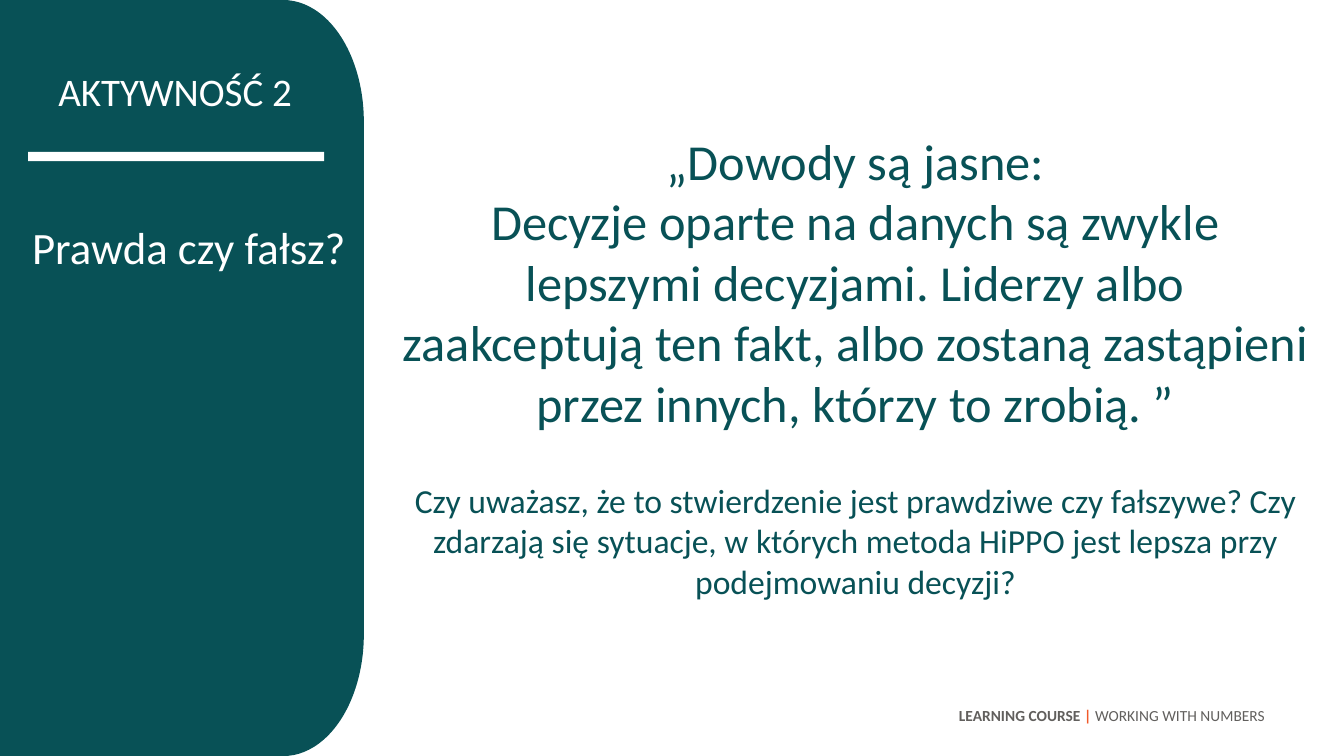
from pptx import Presentation
from pptx.dml.color import RGBColor
from pptx.enum.shapes import MSO_SHAPE
from pptx.enum.text import PP_ALIGN
from pptx.util import Cm, Pt

COLORS = {
    "teal": "085156",
    "white": "FFFFFF",
    "gray": "615F5D",
    "orange": "F15A2A",
}
FONT = "Calibri"
SLIDE_WIDTH = 33.87
SLIDE_HEIGHT = 19.05
PANEL_WIDTH = 7.14
ROUNDED_EDGE_WIDTH = 4.06


def add_block(slide, kind, left, top, width, height, color, rotation=0):
    shape = slide.shapes.add_shape(kind, Cm(left), Cm(top), Cm(width), Cm(height))
    shape.rotation = rotation
    shape.shadow.inherit = False
    shape.fill.solid()
    shape.fill.fore_color.rgb = RGBColor.from_string(COLORS[color])
    shape.line.fill.background()


def add_side_panel(slide):
    add_block(slide, MSO_SHAPE.RECTANGLE, 0, 0, PANEL_WIDTH, SLIDE_HEIGHT, "teal")
    add_block(
        slide,
        MSO_SHAPE.FLOWCHART_TERMINATOR,
        PANEL_WIDTH - SLIDE_HEIGHT / 2,
        (SLIDE_HEIGHT - ROUNDED_EDGE_WIDTH) / 2,
        SLIDE_HEIGHT,
        ROUNDED_EDGE_WIDTH,
        "teal",
        rotation=270,
    )
    add_block(slide, MSO_SHAPE.RECTANGLE, 0.71, 3.83, 7.46, 0.23, "white")


def add_text_frame(slide, left, top, width, height):
    text_box = slide.shapes.add_textbox(Cm(left), Cm(top), Cm(width), Cm(height))
    text_box.text_frame.word_wrap = True
    return text_box.text_frame


def write(paragraph, text, size, color, bold=False, align=PP_ALIGN.LEFT,
          line_spacing=1.0, space_before=0):
    paragraph.alignment = align
    paragraph.line_spacing = line_spacing
    paragraph.space_before = Pt(space_before)
    run = paragraph.add_run()
    run.text = text
    run.font.name = FONT
    run.font.size = Pt(size)
    run.font.bold = bold
    run.font.color.rgb = RGBColor.from_string(COLORS[color])


def add_headings(slide):
    activity = add_text_frame(slide, 1.22, 1.9, 6.48, 1.93)
    write(activity.paragraphs[0], "AKTYWNOŚĆ 2", 27.9, "white",
          line_spacing=0.7, space_before=10)
    question = add_text_frame(slide, 0.56, 5.56, 8.61, 10.11)
    write(question.paragraphs[0], "Prawda czy fałsz?", 32, "white",
          line_spacing=0.9, space_before=10)


def add_statement(slide):
    frame = add_text_frame(slide, 9.84, 3.15, 23.44, 13.26)
    lines = [
        ("„Dowody są jasne:", 36, 0),
        ("Decyzje oparte na danych są zwykle lepszymi decyzjami. Liderzy albo "
         "zaakceptują ten fakt, albo zostaną zastąpieni przez innych, "
         "którzy to zrobią. ”", 36, 0),
        ("Czy uważasz, że to stwierdzenie jest prawdziwe czy fałszywe? "
         "Czy zdarzają się sytuacje, w których metoda HiPPO jest lepsza "
         "przy podejmowaniu decyzji?", 24, 34),
    ]
    for index, (text, size, space_before) in enumerate(lines):
        paragraph = frame.add_paragraph() if index else frame.paragraphs[0]
        write(paragraph, text, size, "teal", align=PP_ALIGN.CENTER,
              space_before=space_before)


def add_footer(slide):
    paragraph = add_text_frame(slide, 1.45, 17.67, 30.68, 1.14).paragraphs[0]
    for text, color, bold in [
        ("LEARNING COURSE ", "gray", True),
        ("|", "orange", True),
        (" WORKING WITH NUMBERS", "gray", False),
    ]:
        write(paragraph, text, 11, color, bold=bold, align=PP_ALIGN.RIGHT)


def main():
    presentation = Presentation()
    presentation.slide_width = Cm(SLIDE_WIDTH)
    presentation.slide_height = Cm(SLIDE_HEIGHT)
    slide = presentation.slides.add_slide(presentation.slide_layouts[6])
    add_side_panel(slide)
    add_footer(slide)
    add_headings(slide)
    add_statement(slide)
    presentation.save("out.pptx")


if __name__ == "__main__":
    main()
